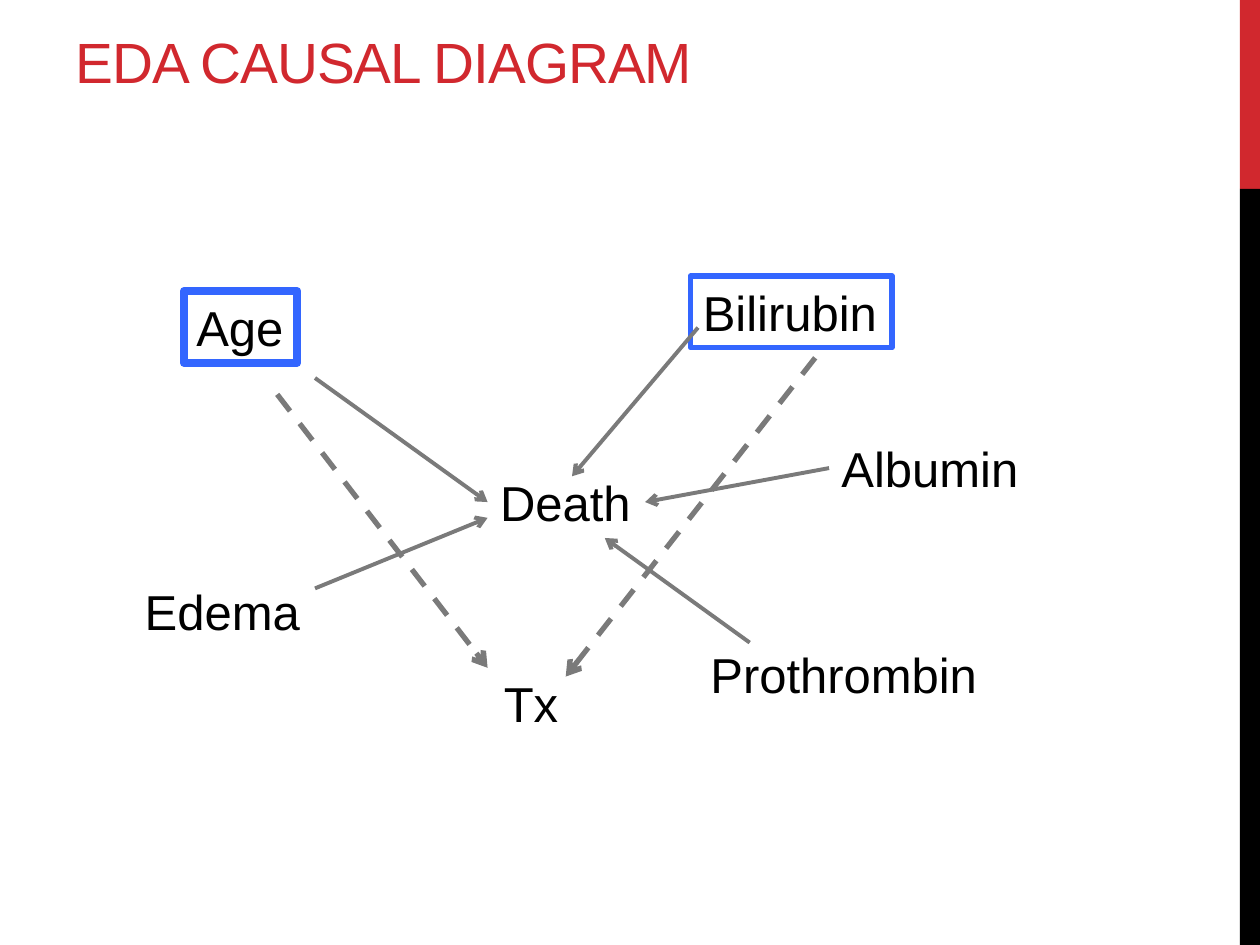
from lxml import etree
from pptx import Presentation
from pptx.dml.color import RGBColor
from pptx.enum.dml import MSO_LINE
from pptx.enum.shapes import MSO_CONNECTOR, MSO_SHAPE
from pptx.enum.text import MSO_ANCHOR, MSO_AUTO_SIZE, PP_ALIGN
from pptx.oxml.ns import qn
from pptx.util import Inches, Pt

RECTANGLE = MSO_SHAPE.RECTANGLE
STRAIGHT = MSO_CONNECTOR.STRAIGHT
DASH = MSO_LINE.DASH
FIT_SHAPE, NO_FIT = MSO_AUTO_SIZE.SHAPE_TO_FIT_TEXT, MSO_AUTO_SIZE.NONE
BOTTOM, LEFT = MSO_ANCHOR.BOTTOM, PP_ALIGN.LEFT

RED, BLACK, BLUE, GRAY = "D1282E", "000000", "3366FF", "7A7A7A"
LEFT_SIDE, RIGHT_SIDE = 1, 3
LABEL_HEIGHT = 0.57


def rgb(value):
    return RGBColor.from_string(value)


class DiagramSlide:
    font_name = "Arial"
    label_size = 28

    def __init__(self, slide):
        self.slide = slide

    def add_run(self, paragraph, text, size, color):
        paragraph.alignment = LEFT
        run = paragraph.add_run()
        run.text = text
        run.font.name = self.font_name
        run.font.size = Pt(size)
        run.font.color.rgb = rgb(color)
        return run

    def title(self, text, left, top, width, height):
        shape = self.slide.shapes.title
        shape.left, shape.top = Inches(left), Inches(top)
        shape.width, shape.height = Inches(width), Inches(height)
        frame = shape.text_frame
        frame.auto_size = NO_FIT
        frame.vertical_anchor = BOTTOM
        run = self.add_run(frame.paragraphs[0], text, 32.4, RED)
        run.font._element.set("spc", "-60")

    def bar(self, top, height, color):
        shape = self.slide.shapes.add_shape(
            RECTANGLE, Inches(9.84), Inches(top), Inches(0.16), Inches(height))
        shape.shadow.inherit = False
        shape.fill.solid()
        shape.fill.fore_color.rgb = rgb(color)
        shape.line.fill.background()

    def label(self, text, left, top, width, border=None, wrap=False):
        shape = self.slide.shapes.add_textbox(
            Inches(left), Inches(top), Inches(width), Inches(LABEL_HEIGHT))
        frame = shape.text_frame
        frame.word_wrap = wrap
        frame.auto_size = FIT_SHAPE
        self.add_run(frame.paragraphs[0], text, self.label_size, BLACK)
        if border:
            shape.line.color.rgb = rgb(BLUE)
            shape.line.width = Pt(border)
        return shape

    def arrow(self, start, end, width=2.25, dash=None):
        points = [Inches(value) for value in (*start, *end)]
        connector = self.slide.shapes.add_connector(STRAIGHT, *points)
        connector.line.color.rgb = rgb(GRAY)
        connector.line.width = Pt(width)
        if dash:
            connector.line.dash_style = dash
        properties = connector._element.spPr
        etree.SubElement(properties.find(qn("a:ln")), qn("a:tailEnd"), type="arrow")
        etree.SubElement(properties, qn("a:effectLst"))
        return connector


def main():
    presentation = Presentation()
    presentation.slide_width, presentation.slide_height = Inches(10), Inches(7.5)
    diagram = DiagramSlide(presentation.slides.add_slide(presentation.slide_layouts[5]))

    # Side bars and title
    diagram.bar(0, 1.5, RED)
    diagram.bar(1.5, 6, BLACK)
    diagram.title("EDA CAUSAL DIAGRAM", 0.5, 0.17, 8.2, 0.63)

    # Variables; the framed ones affect both death and treatment
    diagram.label("Age", 1.46, 2.31, 0.9, border=4.5)
    death = diagram.label("Death", 3.87, 3.7, 1.25)
    diagram.label("Edema", 1.05, 4.57, 1.45)
    diagram.label("Tx", 3.9, 5.3, 1.3, wrap=True)
    albumin = diagram.label("Albumin", 6.58, 3.43, 1.62)
    diagram.label("Bilirubin", 5.48, 2.19, 1.6, border=3)
    diagram.label("Prothrombin", 5.54, 5.07, 2.34)

    # Causes of death
    age_to_death = diagram.arrow((2.5, 3), (3.87, 3.99))
    age_to_death.end_connect(death, LEFT_SIDE)
    diagram.arrow((2.5, 4.67), (3.87, 4.11))
    diagram.arrow((5.54, 2.6), (4.54, 3.78))
    albumin_to_death = diagram.arrow((6.58, 3.7), (5.12, 3.99))
    albumin_to_death.begin_connect(albumin, LEFT_SIDE)
    albumin_to_death.end_connect(death, RIGHT_SIDE)
    diagram.arrow((5.95, 5.1), (4.8, 4.27))

    # Influences on treatment
    diagram.arrow((2.2, 3.13), (3.87, 5.3), 3, DASH)
    diagram.arrow((6.47, 2.84), (4.49, 5.37), 3, DASH)

    presentation.save("out.pptx")


if __name__ == "__main__":
    main()
